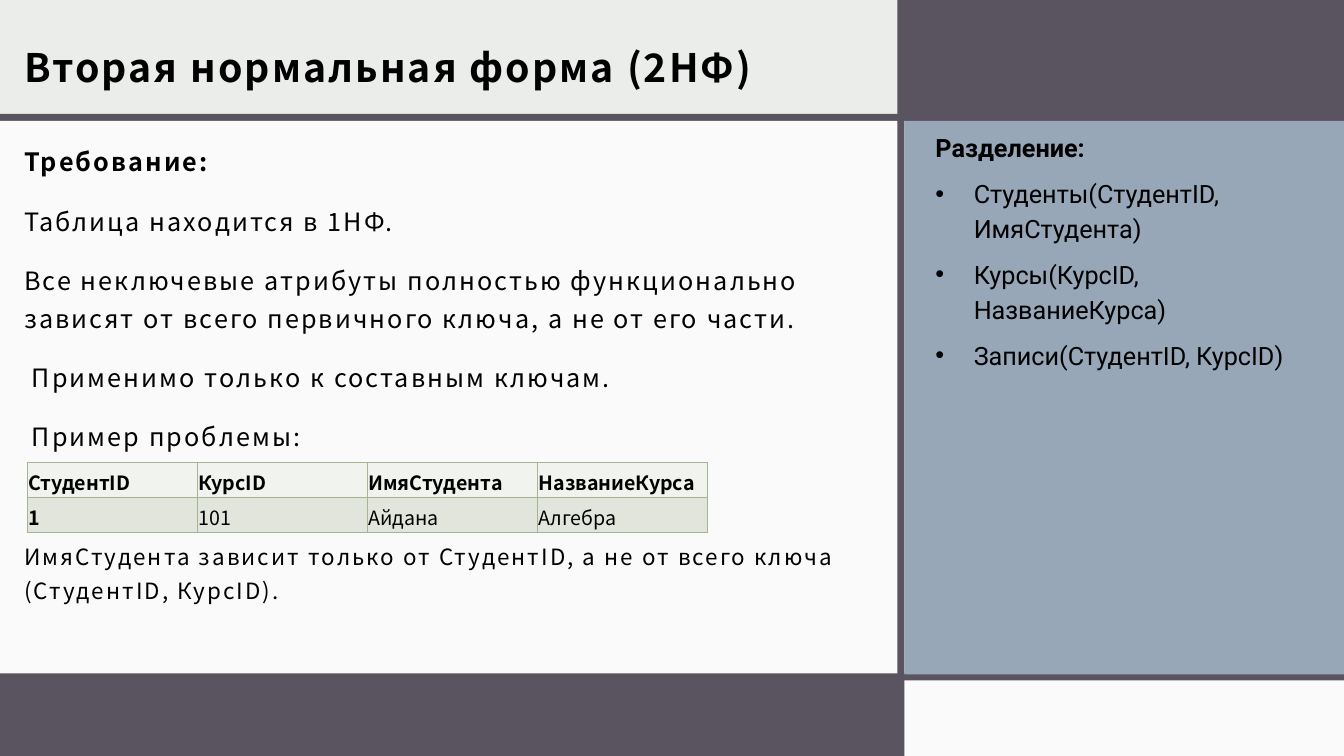
from lxml import etree
from pptx import Presentation
from pptx.dml.color import RGBColor
from pptx.enum import shapes, text
from pptx.oxml import ns
from pptx.util import Inches, Pt

COLORS = {
    "paper": "EBEDEB",
    "panel": "FAFAFA",
    "frame": "595460",
    "aside": "97A7B8",
    "ink": "000000",
    "header": "F0F3EE",
    "row": "E1E5DC",
    "border": "A5B592",
}
MAIN_FONT = "Noto Sans CJK JP"


def write(paragraph, words, size=18, font=MAIN_FONT, bold=False, spacing=0,
          line=None, before=0, after=0, bullet=False):
    paragraph.alignment = text.PP_ALIGN.LEFT
    paragraph.line_spacing = line
    paragraph.space_before = Pt(before)
    paragraph.space_after = Pt(after)
    props = paragraph._p.get_or_add_pPr()
    indent = Inches(0.38) if bullet else 0
    props.set("marL", str(indent))
    props.set("indent", str(-indent))
    if bullet:
        etree.SubElement(props, ns.qn("a:buFont")).set("typeface", "Arial")
        etree.SubElement(props, ns.qn("a:buChar")).set("char", "•")
    else:
        etree.SubElement(props, ns.qn("a:buNone"))
    run = paragraph.add_run()
    run.text = words
    run.font.size = Pt(size)
    run.font.name = font
    run.font.bold = bold
    run.font.color.rgb = RGBColor.from_string(COLORS["ink"])
    if spacing:
        run._r.get_or_add_rPr().set("spc", str(int(spacing * 100)))


prs = Presentation()
prs.slide_width, prs.slide_height = Inches(13.33), Inches(7.5)
slide = prs.slides.add_slide(prs.slide_layouts[1])
slide.background.fill.solid()
slide.background.fill.fore_color.rgb = RGBColor.from_string(COLORS["paper"])

panels = [
    ("frame", 8.94, 0, 4.39, 1.16),
    ("frame", 0, 1.13, 13.33, 0.07),
    ("panel", 0, 1.2, 8.96, 5.49),
    ("frame", 0, 6.72, 8.91, 0.78),
    ("panel", 8.97, 6.74, 4.36, 0.76),
    ("frame", 0, 6.68, 13.33, 0.07),
    ("frame", 8.9, 0, 0.07, 7.5),
    ("aside", 8.97, 1.2, 4.36, 5.49),
]
for color, *box in panels:
    panel = slide.shapes.add_shape(shapes.MSO_SHAPE.RECTANGLE, *map(Inches, box))
    panel.shadow.inherit = False
    panel.fill.solid()
    panel.fill.fore_color.rgb = RGBColor.from_string(COLORS[color])
    panel.line.fill.background()

heading, requirement = slide.placeholders
for holder, box, anchor in [
    (heading, (0.12, -0.56, 8.73, 1.56), text.MSO_ANCHOR.BOTTOM),
    (requirement, (0.12, 1.26, 8.55, 4.95), text.MSO_ANCHOR.TOP),
]:
    holder.left, holder.top, holder.width, holder.height = map(Inches, box)
    frame = holder.text_frame
    frame.auto_size = text.MSO_AUTO_SIZE.NONE
    frame.word_wrap = True
    frame.vertical_anchor = anchor
    frame.margin_left = frame.margin_right = frame.margin_top = Inches(0.12)
    frame.margin_bottom = Inches(0.1)
    slide.shapes.element.append(holder.element)

write(heading.text_frame.paragraphs[0], "Вторая нормальная форма (2НФ)",
      size=28, bold=True, spacing=1.5)

requirement_lines = [
    ("Требование:", {"bold": True}),
    ("Таблица находится в 1НФ.", {}),
    ("Все неключевые атрибуты полностью функционально зависят "
     "от всего первичного ключа, а не от его части.", {}),
    (" Применимо только к составным ключам.", {}),
    (" Пример проблемы:", {}),
    ("ИмяСтудента зависит только от СтудентID, а не от всего ключа "
     "(СтудентID, КурсID).", {"size": 16, "before": 55}),
]
body = requirement.text_frame
for i, (words, style) in enumerate(requirement_lines):
    paragraph = body.add_paragraph() if i else body.paragraphs[0]
    write(paragraph, words, **{"spacing": 1.5, "line": 1.25, "before": 9.3, "after": 6, **style})

enrolments = [
    ["СтудентID", "КурсID", "ИмяСтудента", "НазваниеКурса"],
    ["1", "101", "Айдана", "Алгебра"],
]
example = slide.shapes.add_table(
    2, 4, Inches(0.27), Inches(4.59), Inches(6.75), Inches(0.56)).table
for r, values in enumerate(enrolments):
    for c, value in enumerate(values):
        cell = example.cell(r, c)
        cell.margin_left = cell.margin_right = Inches(0.01)
        cell.margin_top = cell.margin_bottom = Inches(0.01)
        cell.vertical_anchor = text.MSO_ANCHOR.MIDDLE
        write(cell.text_frame.paragraphs[0], value, size=14,
              bold=r == 0 or c == 0, line=1.15, after=8)
        cell_props = cell._tc.get_or_add_tcPr()
        for side in ("lnL", "lnR", "lnT", "lnB"):
            edge = etree.SubElement(cell_props, ns.qn("a:" + side), w=str(Pt(1)))
            edge_fill = etree.SubElement(edge, ns.qn("a:solidFill"))
            etree.SubElement(edge_fill, ns.qn("a:srgbClr"), val=COLORS["border"])
        cell.fill.solid()
        cell.fill.fore_color.rgb = RGBColor.from_string(COLORS["row" if r else "header"])

split = slide.shapes.add_textbox(
    Inches(9.18), Inches(1.22), Inches(3.85), Inches(2.51)).text_frame
split.word_wrap = True
split_lines = [
    "Разделение:",
    "Студенты(СтудентID, ИмяСтудента)",
    "Курсы(КурсID, НазваниеКурса)",
    "Записи(СтудентID, КурсID)",
]
for i, words in enumerate(split_lines):
    paragraph = split.add_paragraph() if i else split.paragraphs[0]
    write(paragraph, words, font="Roboto", bold=i == 0, line=1.15, after=8, bullet=i > 0)

prs.save("out.pptx")
